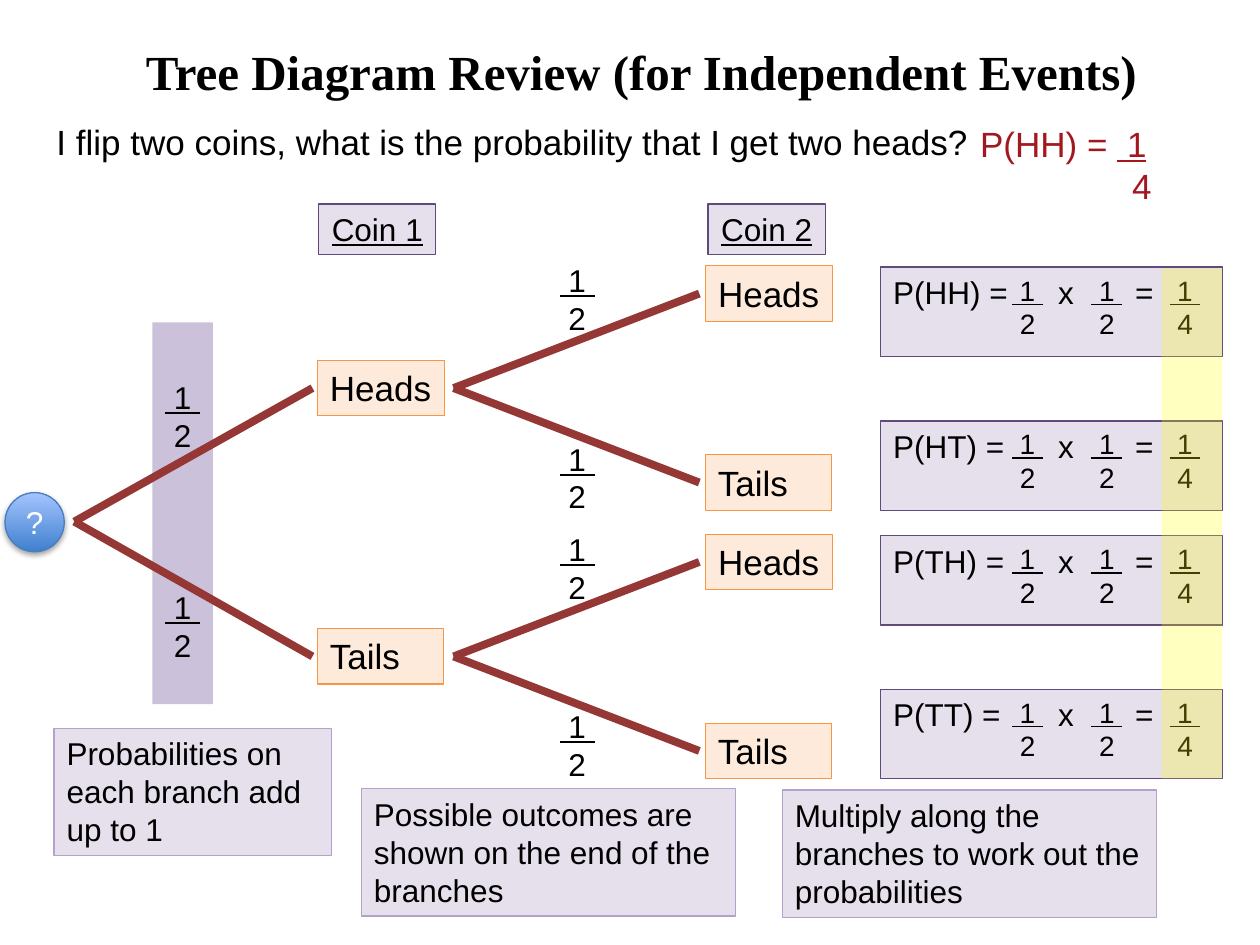
from lxml import etree
from pptx import Presentation
from pptx.dml.color import RGBColor
from pptx.enum import shapes, text
from pptx.oxml.ns import qn
from pptx.util import Inches, Pt

COLORS = {
    "black": "000000", "white": "FFFFFF", "answer": "A3171E",
    "band": "CCC1DA", "lilac": "E6E0EC", "purple": "604A7B", "mauve": "B3A2C7",
    "peach": "FDEADA", "orange": "F79646", "branch": "953735",
    "highlight": "FFFF00", "ball_low": "3F80CE", "ball_high": "A4C4FF",
    "ball_line": "4B7EBC",
}
TITLE = "Tree Diagram Review (for Independent Events)"
QUESTION = "I flip two coins, what is the probability that I get two heads?"
HEADINGS = [("Coin 1", 2.53), ("Coin 2", 5.62)]
# outcome, top of its box, top of the fraction on its branch
FIRST = [("Heads", 2.86, 2.95), ("Tails", 4.99, 4.62)]
SECOND = [
    [("Heads", 2.11, 2.02), ("Tails", 3.61, 3.44)],
    [("Heads", 4.24, 4.16), ("Tails", 5.74, 5.56)],
]
PRODUCTS = [("HH", 2.12), ("HT", 3.34), ("TH", 4.25), ("TT", 5.47)]
FACTORS = [(7.93, "2"), (8.56, "2"), (9.18, "4")]  # left, denominator
NOTES = [
    ("Probabilities on each branch add up to 1", 0.43, 5.78, 2.2),
    ("Possible outcomes are shown on the end of the branches", 2.87, 6.26, 2.97),
    ("Multiply along the branches to work out the probabilities", 6.21, 6.27, 2.97),
]
NODE_H, ROOT_Y = 0.44, 4.14
LEFT, CENTER, RIGHT = text.PP_ALIGN.LEFT, text.PP_ALIGN.CENTER, text.PP_ALIGN.RIGHT

prs = Presentation()
prs.slide_width, prs.slide_height = Inches(10), Inches(7.5)
slide = prs.slides.add_slide(prs.slide_layouts[6])


def rgb(name):
    return RGBColor.from_string(COLORS[name])


def add_box(x, y, w, h, fill, line=None, kind=shapes.MSO_SHAPE.RECTANGLE):
    sp = slide.shapes.add_shape(kind, Inches(x), Inches(y), Inches(w), Inches(h))
    sp.shadow.inherit = False
    sp.fill.solid()
    sp.fill.fore_color.rgb = rgb(fill)
    if line:
        sp.line.color.rgb = rgb(line)
        sp.line.width = Pt(0.75)
    else:
        sp.line.fill.background()
    return sp


def add_label(x, y, w, h):
    return slide.shapes.add_textbox(Inches(x), Inches(y), Inches(w), Inches(h))


def write(sp, lines, size, align=LEFT, color="black", font="Arial",
          anchor=text.MSO_ANCHOR.TOP):
    """Fill a shape with one paragraph per line; left text may use more width."""
    tf = sp.text_frame
    tf.word_wrap = align == LEFT
    tf.vertical_anchor = anchor
    if align == LEFT:
        tf.margin_right = Inches(0.04)
    for i, line in enumerate(lines):
        p = tf.paragraphs[0] if i == 0 else tf.add_paragraph()
        p.text, p.alignment = line, align
        p.font.name, p.font.size = font, Pt(size)
        p.font.color.rgb = rgb(color)
    return tf.paragraphs


def add_fraction(x, y, w, h, size, denominator):
    ps = write(add_label(x, y, w, h), [" 1 ", denominator], size, CENTER)
    ps[0].font.underline = ps[0].runs[0].font.underline = True


def add_node(x, name, y):
    w = 1.01 if name == "Heads" else 1.0
    write(add_box(x, y, w, NODE_H, "peach", "orange"), [name], 20)


def add_branch(x1, y1, x2, y2):
    line = slide.shapes.add_connector(
        shapes.MSO_CONNECTOR.STRAIGHT, Inches(x1), Inches(y1), Inches(x2), Inches(y2))
    line.line.color.rgb = rgb("branch")
    line.line.width = Pt(4.5)
    etree.SubElement(line._element.spPr, qn("a:effectLst"))


def add_product(name, y):
    sp = add_box(6.99, y, 2.71, 0.71, "lilac", "purple")
    p = write(sp, [f"P({name}) =\tx\t="], 18)[0]
    tabs = etree.SubElement(p._p.get_or_add_pPr(), qn("a:tabLst"))
    for stop in (1.31, 1.92):
        etree.SubElement(tabs, qn("a:tab"), pos=str(Inches(stop)), algn="l")
    # the schema puts tab stops ahead of the default run properties
    tabs.getparent().insert(0, tabs)
    for x, denominator in FACTORS:
        add_fraction(x, y, 0.45, 0.64, 16, denominator)


def add_root():
    sp = add_box(0.04, 3.91, 0.47, 0.47, "ball_low", "ball_line", shapes.MSO_SHAPE.OVAL)
    sp.fill.gradient()
    sp.fill.gradient_angle = 90
    for stop, name in zip(sp.fill.gradient_stops, ("ball_low", "ball_high")):
        stop.color.rgb = rgb(name)
    effects = sp._element.spPr.find(qn("a:effectLst"))
    shadow = etree.SubElement(effects, qn("a:outerShdw"), blurRad=str(Pt(3.1)),
                              dist=str(Pt(1.8)), dir="5400000", rotWithShape="0")
    clr = etree.SubElement(shadow, qn("a:srgbClr"), val=COLORS["black"])
    etree.SubElement(clr, qn("a:alpha"), val="35000")
    write(sp, ["?"], 18, CENTER, "white", anchor=text.MSO_ANCHOR.MIDDLE)


add_box(1.21, 2.56, 0.48, 3.03, "band")
write(add_label(0.35, 0.91, 9.27, 0.44), [QUESTION], 20)
for heading, x in HEADINGS:
    p = write(add_box(x, 1.62, 0.93, 0.4, "lilac", "purple"), [heading], 18, CENTER)[0]
    p.font.underline = p.runs[0].font.underline = True

branches = []
for (name, y, fraction_y), children in zip(FIRST, SECOND):
    middle = y + NODE_H / 2
    add_node(2.52, name, y)
    add_fraction(1.21, fraction_y, 0.48, 0.71, 18, "2")
    branches.append((0.59, ROOT_Y, 2.48, middle))
    for child, child_y, child_fraction_y in children:
        add_node(5.6, child, child_y)
        add_fraction(4.34, child_fraction_y, 0.48, 0.71, 18, "2")
        branches.append((3.6, middle, 5.55, child_y + NODE_H / 2))

for name, y in PRODUCTS:
    add_product(name, y)
highlight = add_box(9.22, 2.13, 0.48, 4.05, "highlight")
clr = highlight._element.spPr.find(qn("a:solidFill"))[0]
etree.SubElement(clr, qn("a:alpha"), val="25000")

for branch in branches:
    add_branch(*branch)
for note, x, y, w in NOTES:
    write(add_box(x, y, w, 1.01, "lilac", "mauve"), [note], 18)

answer = write(add_label(7.68, 0.92, 1.5, 0.77), ["P(HH) = ", "4"], 20, color="answer")
r = answer[0].add_run()
r.text, r.font.underline = " 1", True
answer[1].alignment = RIGHT

add_root()
title = write(add_label(1.06, 0.28, 8.15, 0.57), [TITLE], 28, font="Times New Roman")[0]
title.font.bold = True

prs.save("out.pptx")
